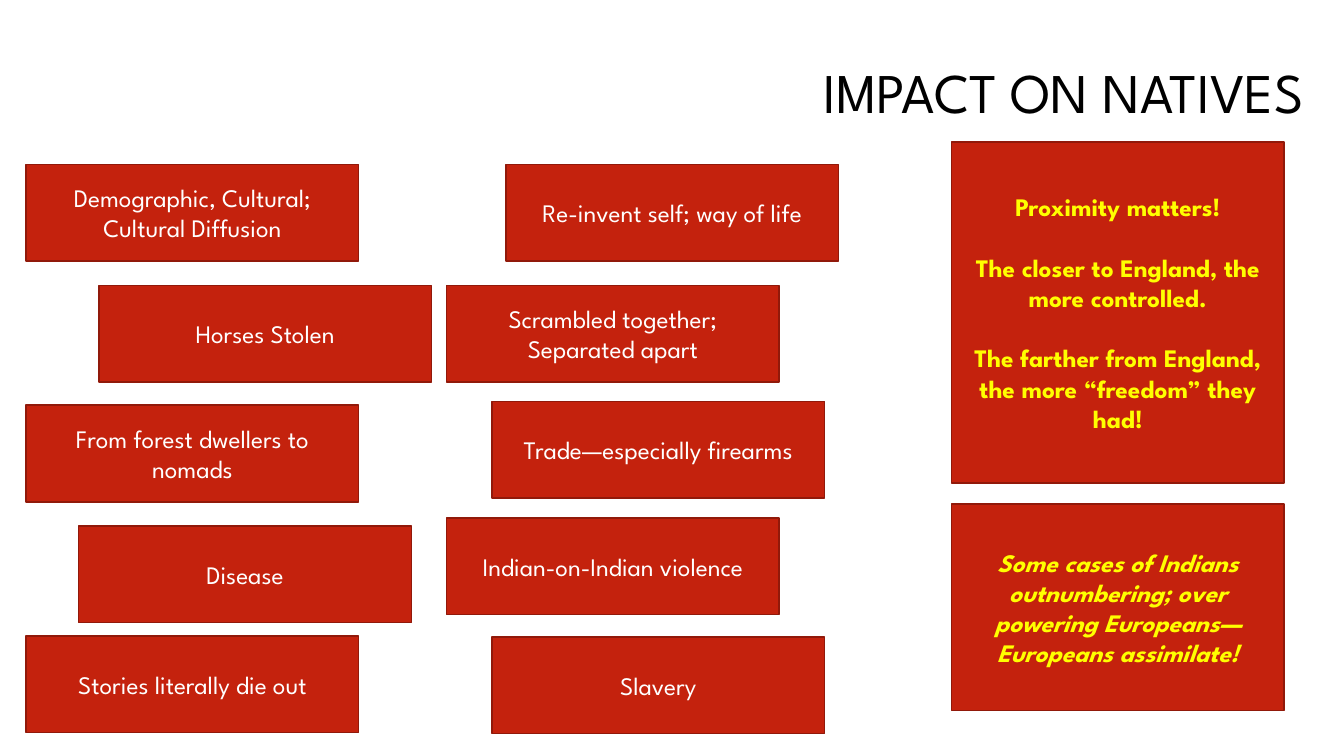
import pptx
import pptx.dml.color
import pptx.enum.shapes
import pptx.enum.text
import pptx.util

Pt = pptx.util.Pt
RGBColor = pptx.dml.color.RGBColor
PP_ALIGN = pptx.enum.text.PP_ALIGN
MSO_ANCHOR = pptx.enum.text.MSO_ANCHOR

RED = RGBColor(0xC4, 0x22, 0x0D)
DARK_RED = RGBColor(0x91, 0x19, 0x0A)
WHITE = RGBColor(0xFF, 0xFF, 0xFF)
YELLOW = RGBColor(0xFF, 0xFF, 0x00)
BLACK = RGBColor(0, 0, 0)

BOX_W, BOX_H = 237.6, 69.1
NOTE_LEFT = 679.7

# Left, top and wording of each effect, column by column
EFFECTS = [
    (18.7, 117.4, "Demographic, Cultural; Cultural Diffusion"),
    (70.6, 203.8, "Horses Stolen"),
    (18.7, 289.4, "From forest dwellers to nomads"),
    (56.2, 375.8, "Disease"),
    (18.7, 454.3, "Stories literally die out"),
    (361.4, 117.4, "Re-invent self; way of life"),
    (319, 203.8, "Scrambled together; Separated apart"),
    (351.4, 286.6, "Trade—especially firearms"),
    (319, 370.1, "Indian-on-Indian violence"),
    (351.4, 455, "Slavery"),
]
PROXIMITY = [
    "Proximity matters!",
    "The closer to England, the more controlled.",
    "The farther from England, the more “freedom” they had!",
]
OUTNUMBERING = ("Some cases of Indians outnumbering; over powering "
                "Europeans—Europeans assimilate!")


class SlideBuilder:
    font_name = "League Spartan"
    paragraph_gap = 21.6

    def __init__(self, slide):
        self.slide = slide

    def fill_text(self, sp, paragraphs, align, line_spacing=1.0, **font):
        tf = sp.text_frame
        tf.word_wrap = True
        tf.vertical_anchor = MSO_ANCHOR.MIDDLE
        color = font.pop("color")
        for i, text in enumerate(paragraphs):
            p = tf.add_paragraph() if i else tf.paragraphs[0]
            p.alignment = align
            p.line_spacing = line_spacing
            if i:
                p.space_before = Pt(self.paragraph_gap)
            r = p.add_run()
            r.text = text
            for name, value in {"name": self.font_name, **font}.items():
                setattr(r.font, name, value)
            r.font.color.rgb = color

    def title(self, left, top, width, height, text):
        sp = self.slide.shapes.add_textbox(Pt(left), Pt(top), Pt(width), Pt(height))
        self.fill_text(sp, [text], PP_ALIGN.RIGHT, 0.9, size=Pt(40), color=BLACK)

    def box(self, left, top, height, paragraphs, **font):
        sp = self.slide.shapes.add_shape(
            pptx.enum.shapes.MSO_SHAPE.RECTANGLE,
            Pt(left), Pt(top), Pt(BOX_W), Pt(height))
        sp.shadow.inherit = False
        sp.fill.solid()
        sp.fill.fore_color.rgb = RED
        sp.line.color.rgb = DARK_RED
        sp.line.width = Pt(1)
        self.fill_text(sp, paragraphs, PP_ALIGN.CENTER, size=Pt(18), **font)


def main():
    prs = pptx.Presentation()
    prs.slide_width, prs.slide_height = Pt(960), Pt(540)
    s = SlideBuilder(prs.slides.add_slide(prs.slide_layouts[6]))

    s.title(259.9, 17.3, 678.2, 101.5, "IMPACT ON NATIVES")
    for left, top, text in EFFECTS:
        s.box(left, top, BOX_H, [text], color=WHITE)
    s.box(NOTE_LEFT, 101.5, 243.4, PROXIMITY, color=YELLOW, bold=True)
    s.box(NOTE_LEFT, 360, 147.6, [OUTNUMBERING], color=YELLOW, bold=True, italic=True)

    prs.save("out.pptx")


if __name__ == "__main__":
    main()
